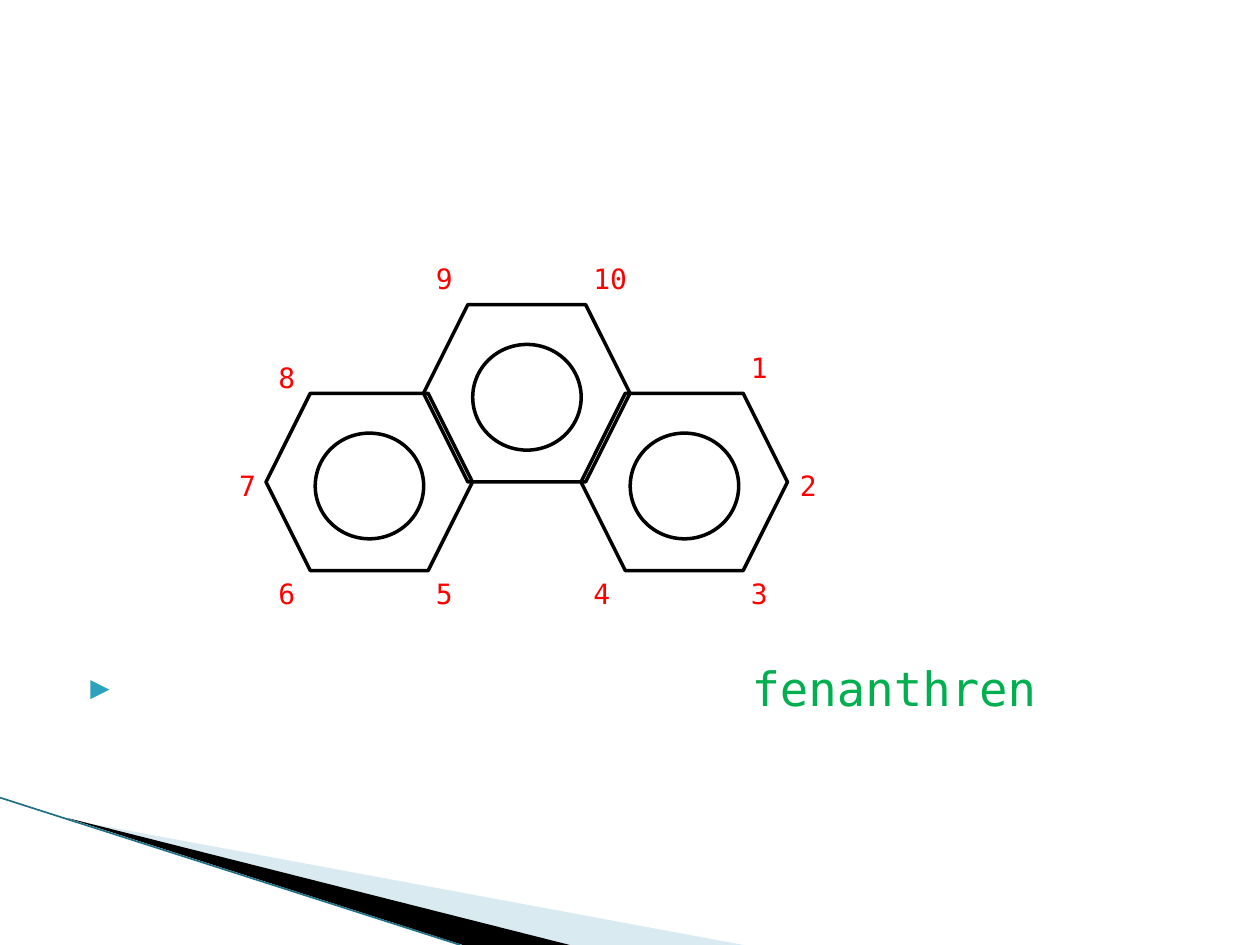
from dataclasses import dataclass
from typing import Any

from lxml import etree
from pptx import Presentation
from pptx.dml.color import RGBColor
from pptx.enum import shapes, text
from pptx.oxml import ns
from pptx.util import Pt

BLACK = RGBColor(0, 0, 0)
RED = RGBColor(0xFF, 0, 0)
GREEN = RGBColor(0, 0xB0, 0x50)
TEAL = RGBColor(0x1E, 0x70, 0x85)
BULLET_BLUE = RGBColor(0x2D, 0xA2, 0xBF)
PALE_BLUE = RGBColor(0xA0, 0xCB, 0xDC)

RING_LEFT, RING_PITCH = 152, 90
RING_TOPS = (224.8, 174.1, 224.8)
COLUMNS = [RING_LEFT + RING_PITCH * i for i in range(4)]
BOTTOM_ROW = 326.2
SIDE_ROW = 264.2
ATOM_NUMBERS = {
    "9": (COLUMNS[1], 146.2),
    "8": (COLUMNS[0], 202.3),
    "7": (129.6, SIDE_ROW),
    "6": (COLUMNS[0], BOTTOM_ROW),
    "5": (COLUMNS[1], BOTTOM_ROW),
    "4": (COLUMNS[2], BOTTOM_ROW),
    "3": (COLUMNS[3], BOTTOM_ROW),
    "2": (450, SIDE_ROW),
    "1": (COLUMNS[3], 196.6),
    "10": (COLUMNS[2], 146.2),
}


def add_xml(parent, tag, **attributes):
    return etree.SubElement(parent, ns.qn(tag), attributes)


@dataclass
class SlideBuilder:
    slide: Any
    font: str = "DejaVu Sans Mono"
    stroke: float = 2

    def wedge(self, points, color, alpha=None):
        start, *rest = [(Pt(x), Pt(y)) for x, y in points]
        outline = self.slide.shapes.build_freeform(*start)
        outline.add_line_segments(rest)
        wedge = outline.convert_to_shape()
        wedge.shadow.inherit = False
        wedge.fill.solid()
        wedge.fill.fore_color.rgb = color
        wedge.line.fill.background()
        if alpha is not None:
            fill = wedge.fill._xPr.find(ns.qn("a:solidFill"))
            add_xml(fill[0], "a:alpha", val=str(alpha * 1000))

    def line(self, start, end, color, width):
        ends = [Pt(value) for value in (*start, *end)]
        line = self.slide.shapes.add_connector(shapes.MSO_CONNECTOR.STRAIGHT, *ends)
        line.line.color.rgb = color
        line.line.width = Pt(width)
        add_xml(line._element.spPr, "a:effectLst")

    def ring(self, left, top):
        ring = self.slide.shapes.add_group_shape()
        parts = (
            (shapes.MSO_SHAPE.HEXAGON, (left, top, 118, 101.3)),
            (shapes.MSO_SHAPE.FLOWCHART_CONNECTOR, (left + 28.1, top + 22.7, 62, 60.4)),
        )
        for preset, place in parts:
            part = ring.shapes.add_shape(preset, *map(Pt, place))
            part.shadow.inherit = False
            part.fill.background()
            part.line.color.rgb = BLACK
            part.line.width = Pt(self.stroke)

    def label(self, words, place, size, color, **frame_format):
        box = self.slide.shapes.add_textbox(*map(Pt, place))
        for name, value in frame_format.items():
            setattr(box.text_frame, name, value)
        paragraph = box.text_frame.paragraphs[0]
        run = paragraph.add_run()
        run.text = words
        for name, value in {"name": self.font, "size": Pt(size)}.items():
            setattr(run.font, name, value)
        run.font.color.rgb = color
        return paragraph

    def bullet(self, paragraph, symbol, color, percent, indent, bullet_at):
        properties = paragraph._p.get_or_add_pPr()
        properties.set("marL", str(Pt(indent)))
        properties.set("indent", str(Pt(bullet_at - indent)))
        bullet_color = add_xml(properties, "a:buClr")
        add_xml(bullet_color, "a:srgbClr", val=str(color))
        add_xml(properties, "a:buSzPct", val=str(percent * 1000))
        add_xml(properties, "a:buFont", typeface=self.font)
        add_xml(properties, "a:buChar", char=symbol)


def main():
    deck = Presentation()
    deck.slide_width, deck.slide_height = Pt(720), Pt(540)
    builder = SlideBuilder(deck.slides.add_slide(deck.slide_layouts[6]))

    builder.wedge([(39.6, 468.4), (424.8, 540), (325.7, 540)], PALE_BLUE, alpha=40)
    builder.wedge([(38, 467.3), (325.7, 540), (264.5, 540)], BLACK)
    builder.line((0, 455.8), (263, 540), TEAL, 0.95)

    compound = builder.label(
        "fenanthren", (36, 373, 648, 38.6), 27, GREEN, word_wrap=True
    )
    builder.bullet(compound, "▶", BULLET_BLUE, 68, indent=386.4, bullet_at=8.6)

    for column, top in zip(COLUMNS, RING_TOPS):
        builder.ring(column, top)

    for number, (left, top) in ATOM_NUMBERS.items():
        width = 14.4 + 9.7 * len(number)
        builder.label(
            number, (left, top, width, 26.6), 16, RED,
            word_wrap=False, auto_size=text.MSO_AUTO_SIZE.SHAPE_TO_FIT_TEXT,
        )

    deck.save("out.pptx")


if __name__ == "__main__":
    main()
